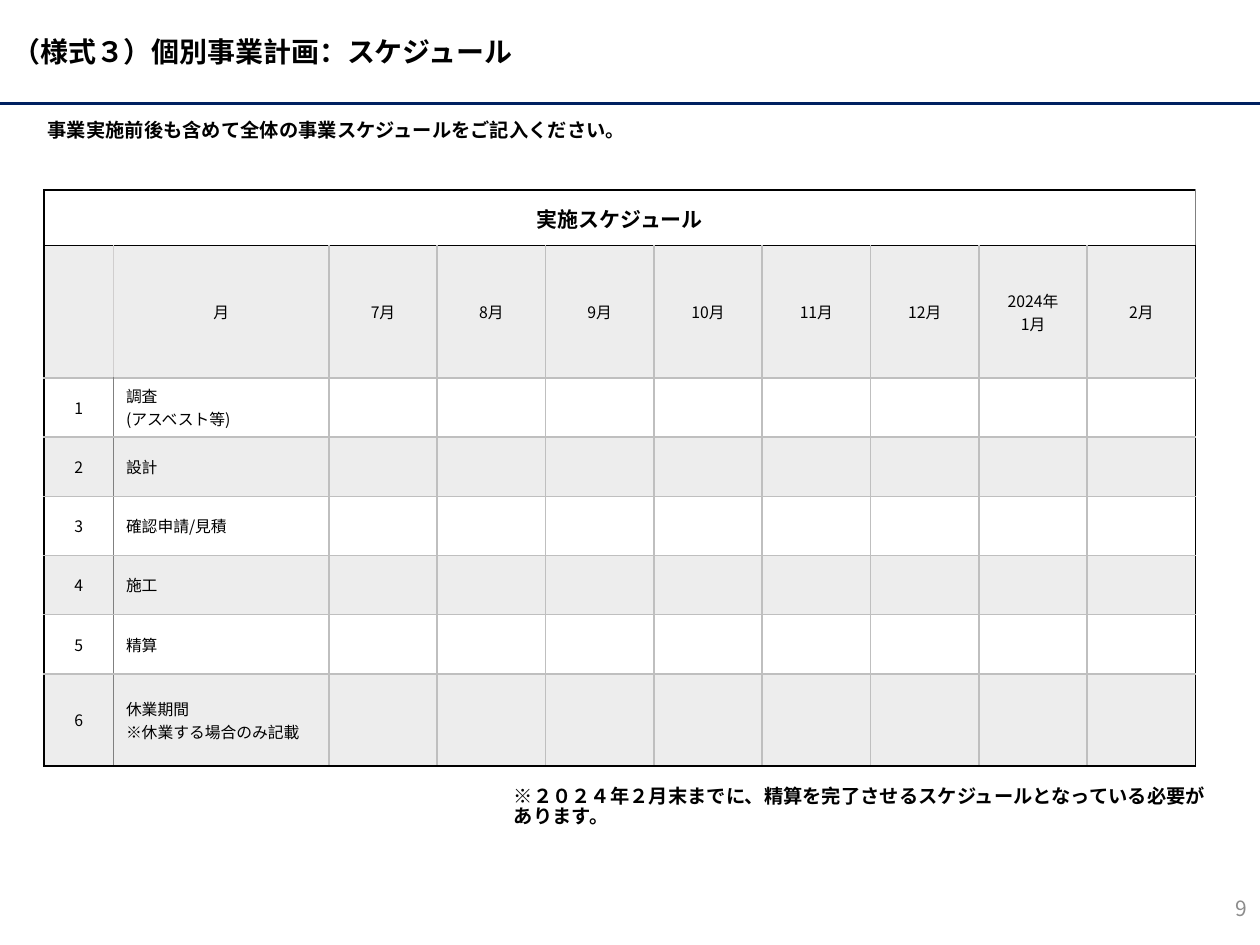
from dataclasses import dataclass

import pptx
import pptx.dml.color
import pptx.enum.shapes
import pptx.enum.text
import pptx.oxml
import pptx.oxml.ns
import pptx.util
from pptx.util import Inches

FACE = "Noto Sans CJK JP"
BLACK, GRAY = "000000", "BFBFBF"
ALIGN = pptx.enum.text.PP_ALIGN
MIDDLE = pptx.enum.text.MSO_ANCHOR.MIDDLE
TOP = pptx.enum.text.MSO_ANCHOR.TOP
WIDTHS = [0.55, 1.71] + [0.86] * 8
HEIGHTS = [0.44, 1.05] + [0.47] * 5 + [0.73]
MONTHS = ["7月", "8月", "9月", "10月", "11月", "12月", "2024年\n1月", "2月"]
TASKS = ["調査\n(アスベスト等)", "設計", "確認申請/見積", "施工", "精算",
         "休業期間\n※休業する場合のみ記載"]


@dataclass
class Label:
    text: str
    left: float
    top: float
    width: float
    height: float
    size: float
    bold: bool = True
    color: str = BLACK
    align: ALIGN = ALIGN.LEFT
    anchor: pptx.enum.text.MSO_ANCHOR = TOP
    pitch: float = 1.0


LABELS = [
    Label("（様式３）個別事業計画：スケジュール", 0, 0, 10, 0.82, 16, anchor=MIDDLE),
    Label("事業実施前後も含めて全体の事業スケジュールをご記入ください。",
          0.28, 0.92, 9.46, 0.29, 11, pitch=0.83),
    Label("9", 7.75, 7.01, 2.25, 0.4, 12, False, "8C8C8C", ALIGN.RIGHT, MIDDLE),
    Label("※２０２４年２月末までに、精算を完了させるスケジュールとなっている必要があります。",
          3.98, 6.21, 5.7, 0.29, 11, pitch=0.83),
]


def rgb(code: str) -> pptx.dml.color.RGBColor:
    return pptx.dml.color.RGBColor.from_string(code)


def node(parent, tag: str, **attrs: str):
    item = pptx.oxml.parse_xml(f"<{tag} {pptx.oxml.ns.nsdecls('a')}/>")
    for key, value in attrs.items():
        item.set(key, value)
    parent.append(item)
    return item


def write(frame, text: str, size: float, bold: bool = False,
          color: str = BLACK, align=ALIGN.LEFT, pitch: float = 1.0) -> None:
    for i, line in enumerate(text.split("\n")):
        para = frame.add_paragraph() if i else frame.paragraphs[0]
        para.alignment = align
        para.line_spacing = pitch
        run = para.add_run()
        run.text = line
        font = run.font
        font.size, font.bold, font.name = pptx.util.Pt(size), bold, FACE
        font.color.rgb = rgb(color)
        node(run._r.get_or_add_rPr(), "a:ea", typeface=FACE)


def place(slide, label: Label) -> None:
    box = slide.shapes.add_textbox(Inches(label.left), Inches(label.top),
                                   Inches(label.width), Inches(label.height))
    frame = box.text_frame
    frame.word_wrap = True
    frame.vertical_anchor = label.anchor
    write(frame, label.text, label.size, label.bold, label.color,
          label.align, label.pitch)


def rule(slide) -> None:
    line = slide.shapes.add_connector(
        pptx.enum.shapes.MSO_CONNECTOR.STRAIGHT,
        Inches(0), Inches(0.82), Inches(10), Inches(0.82))
    line.line.color.rgb = rgb("002060")
    line.line.width = pptx.util.Pt(1.5)
    node(line._element.spPr, "a:effectLst")


def upright(row: int, edge: int) -> tuple[str, float]:
    if edge in (0, len(WIDTHS)):
        return BLACK, 1
    if edge == 1:
        return ("D0CECE", 1) if row == 1 else ("808080", 0.5)
    return GRAY, 1


def level(edge: int) -> tuple[str, float]:
    return (BLACK if edge in (0, 1, len(HEIGHTS)) else GRAY), 1


def style(cell, row: int, col: int) -> None:
    props = cell._tc.get_or_add_tcPr()
    sides = {"L": upright(row, col), "R": upright(row, col + 1),
             "T": level(row), "B": level(row + 1)}
    for side, (color, width) in sides.items():
        edge = node(props, f"a:ln{side}", w=str(pptx.util.Pt(width)))
        node(node(edge, "a:solidFill"), "a:srgbClr", val=color)
    if row % 2:
        shade = node(node(props, "a:solidFill"), "a:srgbClr", val="A5A5A5")
        node(shade, "a:alpha", val="20000")
    else:
        node(props, "a:noFill")


def fill(cell, row: int, col: int) -> None:
    cell.vertical_anchor = MIDDLE
    if row == 0:
        if col == 0:
            write(cell.text_frame, "実施スケジュール", 12, True, align=ALIGN.CENTER)
    elif row == 1 and col == 1:
        cell._tc.get_or_add_tcPr().set("vert", "eaVert")
        write(cell.text_frame, "月", 9, align=ALIGN.CENTER)
    elif row == 1 and col > 1:
        cell.margin_left = cell.margin_right = Inches(0)
        write(cell.text_frame, MONTHS[col - 2], 9, align=ALIGN.CENTER)
    elif row > 1 and col == 0:
        write(cell.text_frame, str(row - 1), 9, align=ALIGN.CENTER)
    elif row > 1 and col == 1:
        write(cell.text_frame, TASKS[row - 2], 9)


def grid(slide) -> None:
    table = slide.shapes.add_table(
        len(HEIGHTS), len(WIDTHS), Inches(0.35), Inches(1.51),
        Inches(sum(WIDTHS)), Inches(sum(HEIGHTS))).table
    table.first_row = table.horz_banding = False
    for col, width in enumerate(WIDTHS):
        table.columns[col].width = Inches(width)
    for row, height in enumerate(HEIGHTS):
        table.rows[row].height = Inches(height)
        for col in range(len(WIDTHS)):
            cell = table.cell(row, col)
            fill(cell, row, col)
            style(cell, row, col)
    table.cell(0, 0).merge(table.cell(0, len(WIDTHS) - 1))


def main() -> None:
    deck = pptx.Presentation()
    deck.slide_width, deck.slide_height = Inches(10), Inches(7.5)
    slide = deck.slides.add_slide(deck.slide_layouts[6])
    rule(slide)
    grid(slide)
    for label in LABELS:
        place(slide, label)
    deck.save("out.pptx")


if __name__ == "__main__":
    main()
